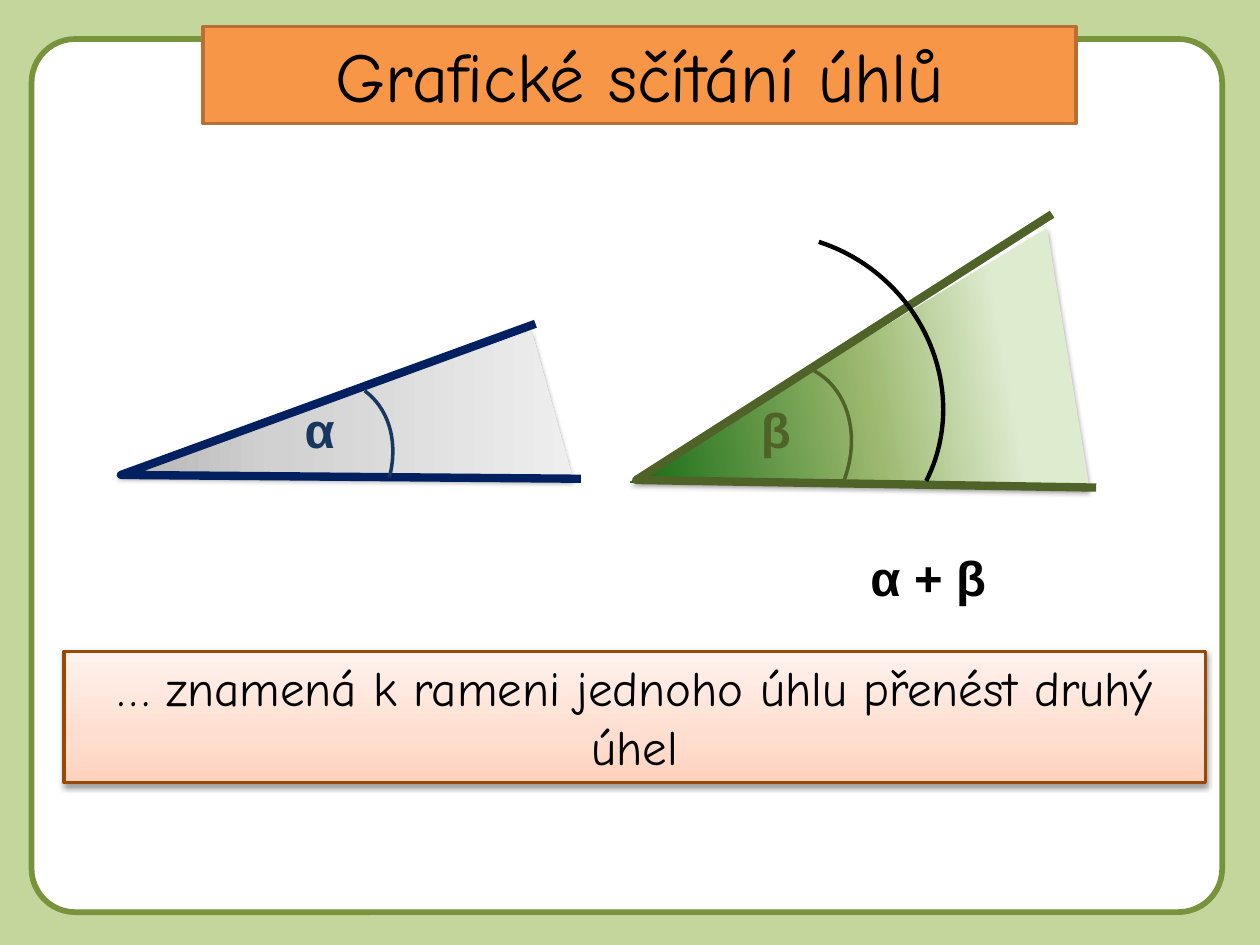
from dataclasses import dataclass

from lxml.etree import SubElement
from pptx import Presentation
from pptx.dml.color import RGBColor
from pptx.enum.shapes import MSO_SHAPE as Shape
from pptx.enum.text import MSO_ANCHOR as Anchor, MSO_AUTO_SIZE as AutoSize, PP_ALIGN as Align
from pptx.oxml.ns import qn
from pptx.util import Inches, Pt


@dataclass(frozen=True)
class Theme:
    background: str = "C3D69B"
    paper: str = "FFFFFF"
    border: str = "77933C"
    title_fill: str = "F79646"
    title_line: str = "B76F34"
    note_line: str = "984807"
    ink: str = "000000"
    heading_font: str = "Comic Neue"
    label_font: str = "Arial"
    title_size: int = 40
    text_size: int = 28


THEME = Theme()

# Content: boxes are left, top, width, height in inches
TITLE = "Grafické sčítání úhlů"
NOTE = "… znamená k rameni jednoho úhlu přenést druhý úhel"
SUM = "α + β"
FRAME_BOX = (0.25, 0.31, 9.45, 6.93)
TITLE_BOX = (1.61, 0.21, 6.93, 0.77)
NOTE_BOX = (0.51, 5.17, 9.06, 1.04)
SUM_BOX = (6.81, 4.3, 1.65, 0.57)
SUM_ARC = dict(box=(4.8, 1.89, 2.72, 2.56), rotation=41.3, ends=(146.31, 208.34))
NOTE_GRADIENT = ([(0, "FFD2BD"), (35, "FFDED0"), (100, "FFF2ED")], 270)
ANGLES = [
    dict(
        name="β", ink="4F6228", arm_color="4F6228", label_box=(5.94, 3.12, 0.55, 0.57),
        sector=[(8.31, 1.81), (5, 3.83), (8.65, 3.89)],
        arms=[(8.35, 1.7), (5.05, 3.81), (8.7, 3.87)],
        gradient=([(21, "DDEBCF"), (50, "9CB86E"), (100, "156B13")], 170),
        arc=dict(box=(5.46, 2.85, 1.26, 1.57), rotation=28.3, ends=(162, 208.34)),
    ),
    dict(
        name="α", ink="17375E", arm_color="002060", label_box=(2.32, 3.12, 0.55, 0.57),
        sector=[(4.22, 2.63), (0.91, 3.78), (4.55, 3.81)],
        arms=[(4.25, 2.57), (0.96, 3.77), (4.61, 3.8)],
        gradient=([(11, "BDBDBD"), (35, "D1D1D1"), (100, "EEEEEE")], 0),
        arc=dict(box=(1.8, 2.95, 1.26, 1.57), rotation=36.4, ends=(162, 196.88)),
    ),
]


def inches(lengths):
    return [Inches(length) for length in lengths]


def write(shape, text, font=THEME.label_font, size=THEME.text_size,
          color=THEME.ink, bold=False, align=Align.LEFT):
    frame = shape.text_frame
    frame.word_wrap = True
    frame.auto_size = AutoSize.NONE
    frame.vertical_anchor = Anchor.TOP
    paragraph = frame.paragraphs[0]
    paragraph.alignment = align
    run = paragraph.add_run()
    run.text = text
    run.font.name, run.font.size, run.font.bold = font, Pt(size), bold
    run.font.color.rgb = RGBColor.from_string(color)


def paint(shape, fill=None, line=None, width=2):
    for part, color in ((shape.fill, fill), (shape.line.fill, line)):
        if color:
            part.solid()
            part.fore_color.rgb = RGBColor.from_string(color)
        else:
            part.background()
    if line:
        shape.line.width = Pt(width)
    shape.shadow.inherit = False


def paint_gradient(shape, stops, angle):
    shape.fill.gradient()
    shape.fill.gradient_angle = -angle % 360  # the property counts anticlockwise
    stop_list = shape.element.spPr.find(".//" + qn("a:gsLst"))
    stop_list.clear()
    for position, color in stops:
        stop = SubElement(stop_list, qn("a:gs"), pos=str(position * 1000))
        SubElement(stop, qn("a:srgbClr"), val=color)


def cast_shadow(shape):
    effects = shape.element.spPr.find(qn("a:effectLst"))
    shadow = SubElement(effects, qn("a:outerShdw"), blurRad=str(Pt(3.1)),
                        dist=str(Pt(1.6)), dir="5400000", rotWithShape="0")
    color = SubElement(shadow, qn("a:srgbClr"), val=THEME.ink)
    SubElement(color, qn("a:alpha"), val="38000")


def add_path(shapes, points, close):
    # The builder rounds coordinates to whole units, so they are given in EMU
    start, *others = [inches(point) for point in points]
    builder = shapes.build_freeform(*start)
    builder.add_line_segments(others, close=close)
    return builder.convert_to_shape()


def add_arc(shapes, box, rotation, ends, color, width=2):
    arc = shapes.add_shape(Shape.ARC, *inches(box))
    arc.adjustments[0], arc.adjustments[1] = ends
    arc.rotation = rotation
    paint(arc, line=color, width=width)


def add_label(shapes, text, box, color):
    write(shapes.add_textbox(*inches(box)), text, color=color, bold=True)


def add_angle(slide, angle):
    shapes = slide.shapes.add_group_shape().shapes
    sector = add_path(shapes, angle["sector"], close=True)
    paint(sector)
    paint_gradient(sector, *angle["gradient"])
    cast_shadow(sector)
    arms = add_path(shapes, angle["arms"], close=False)
    paint(arms, line=angle["arm_color"], width=4.75)
    add_arc(shapes, **angle["arc"], color=angle["ink"])
    add_label(shapes, angle["name"], angle["label_box"], angle["ink"])


def main():
    presentation = Presentation()
    presentation.slide_width, presentation.slide_height = Inches(10), Inches(7.5)
    slide = presentation.slides.add_slide(presentation.slide_layouts[5])
    shapes = slide.shapes
    slide.background.fill.solid()
    slide.background.fill.fore_color.rgb = RGBColor.from_string(THEME.background)

    # Rounded page, placed behind the title
    title = shapes.title
    page = shapes.add_shape(Shape.ROUNDED_RECTANGLE, *inches(FRAME_BOX))
    page.adjustments[0] = 0.05
    paint(page, THEME.paper, THEME.border, 3.25)
    title.element.addprevious(page.element)

    # Title
    title.left, title.top, title.width, title.height = inches(TITLE_BOX)
    paint(title, THEME.title_fill, THEME.title_line)
    write(title, TITLE, font=THEME.heading_font, size=THEME.title_size, align=Align.CENTER)

    # Explanation
    note = shapes.add_shape(Shape.RECTANGLE, *inches(NOTE_BOX))
    paint(note, line=THEME.note_line)
    paint_gradient(note, *NOTE_GRADIENT)
    cast_shadow(note)
    write(note, NOTE, font=THEME.heading_font, align=Align.CENTER)

    # Both angles and their sum
    for angle in ANGLES:
        add_angle(slide, angle)
    add_label(shapes, SUM, SUM_BOX, THEME.ink)
    add_arc(shapes, **SUM_ARC, color=THEME.ink, width=2.5)

    presentation.save("out.pptx")


if __name__ == "__main__":
    main()
